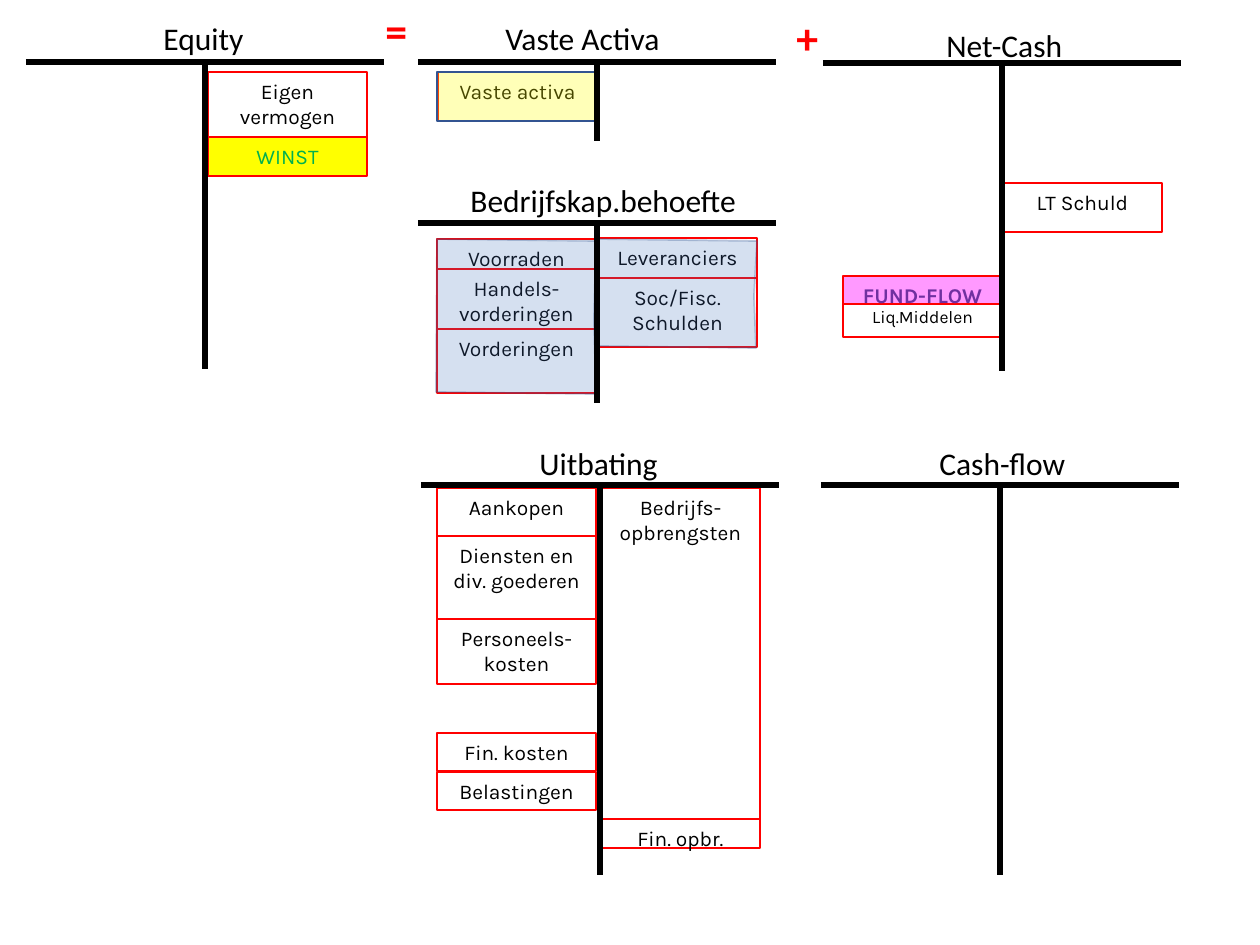
from lxml import etree
from pptx import Presentation
from pptx.dml.color import RGBColor
from pptx.enum.shapes import MSO_CONNECTOR, MSO_SHAPE
from pptx.enum.text import MSO_ANCHOR, MSO_AUTO_SIZE, PP_ALIGN
from pptx.oxml.ns import qn
from pptx.util import Pt

PX = 914400 / 126
RECTANGLE = MSO_SHAPE.RECTANGLE
STRAIGHT = MSO_CONNECTOR.STRAIGHT
CENTER = PP_ALIGN.CENTER
TOP = MSO_ANCHOR.TOP
GROW = MSO_AUTO_SIZE.SHAPE_TO_FIT_TEXT
BOX_WIDTH = 159
HALF_BAR = 179


def paint(color_format, color, opacity=100):
    """Set a hex colour on a fill, line or font colour, opacity in percent."""
    color_format.rgb = RGBColor.from_string(color)
    if opacity < 100:
        for element in color_format._xFill.iter(qn("a:srgbClr")):
            etree.SubElement(element, qn("a:alpha"), val=str(opacity * 1000))


def write(shape, text, color="000000", alignment=None, **font_values):
    for index, line in enumerate(text.split("\n")):
        frame = shape.text_frame
        paragraph = frame.add_paragraph() if index else frame.paragraphs[0]
        paragraph.alignment = alignment
        run = paragraph.add_run()
        run.text = line
        for name, value in font_values.items():
            setattr(run.font, name, value)
        paint(run.font.color, color)


presentation = Presentation()
presentation.slide_width = round(1260 * PX)
presentation.slide_height = round(945 * PX)
slide = presentation.slides.add_slide(presentation.slide_layouts[6])
shapes = slide.shapes

# Balance items: left, [(text, top, height, format values)]
columns = [
    (208, [("Eigen vermogen", 72, 65, {}),
           ("WINST", 137, 39, {"fill": "FFFF00", "color": "00B050"})]),
    (438, [("Vaste activa", 72, 49, {})]),
    (1003, [("LT Schuld", 183, 49, {})]),
    (843, [("Liq.Middelen", 300, 37, {"size": Pt(10)}),
           ("FUND-FLOW", 276, 28,
            {"fill": "FF99FF", "color": "7030A0", "bold": True})]),
    (437, [("Voorraden", 239, 30, {}),
           ("Handels-vorderingen", 269, 60, {}),
           ("Vorderingen", 329, 64, {})]),
    (598, [("Leveranciers", 238, 40, {}),
           ("Soc/Fisc.\nSchulden", 278, 69, {})]),
    (437, [("Aankopen", 488, 48, {}),
           ("Diensten en div. goederen", 536, 83, {}),
           ("Personeels-kosten", 619, 65, {}),
           ("Fin. kosten", 733, 38, {}),
           ("Belastingen", 772, 38, {})]),
    (601, [("Bedrijfs-opbrengsten", 488, 331, {}),
           ("Fin. opbr.", 819, 29, {})]),
]
for left, items in columns:
    for text, top, height, values in items:
        values = {"name": "Karla", "size": Pt(12), "fill": "FFFFFF", **values}
        box = shapes.add_shape(RECTANGLE, round(left * PX), round(top * PX),
                               round(BOX_WIDTH * PX), round(height * PX))
        box.shadow.inherit = False
        box.fill.solid()
        paint(box.fill.fore_color, values.pop("fill"))
        paint(box.line.color, "FF0000")
        box.line.width = Pt(0.75)
        box.text_frame.word_wrap = True
        box.text_frame.vertical_anchor = TOP
        write(box, text, alignment=CENTER, **values)

# Translucent highlights: corner points, fill, fill opacity, line, line opacity
highlights = [
    ([(437, 72), (596, 72), (596, 121), (437, 121)],
     "FFFF00", 28, "325491", 100),
    ([(437, 239), (596, 241), (594, 320), (596, 394), (436, 392)],
     "4472BE", 22, "2F528F", 31),
    ([(597, 239), (757, 241), (754, 296), (756, 348), (596, 346)],
     "4472BE", 22, "2F528F", 31),
]
for points, fill, fill_opacity, line, line_opacity in highlights:
    builder = shapes.build_freeform(*points[0], scale=PX)
    builder.add_line_segments(points[1:], close=True)
    highlight = builder.convert_to_shape()
    highlight.shadow.inherit = False
    highlight.fill.solid()
    paint(highlight.fill.fore_color, fill, fill_opacity)
    paint(highlight.line.color, line, line_opacity)
    highlight.line.width = Pt(1)

# T-accounts: stem x, bar y, stem bottom
accounts = [(205, 62, 369), (597, 62, 141), (1002, 63, 371),
            (597, 223, 403), (600, 485, 875), (1000, 485, 875)]
for stem, bar, bottom in accounts:
    for ends in [(stem - HALF_BAR, bar, stem + HALF_BAR, bar),
                 (stem, bar, stem, bottom)]:
        connector = shapes.add_connector(
            STRAIGHT, *[round(value * PX) for value in ends])
        paint(connector.line.color, "000000")
        connector.line.width = Pt(3)
        etree.SubElement(connector._element.spPr, qn("a:effectLst"))

# Titles and signs: text, left, top, width, height, format values
title_format = {"size": Pt(18)}
sign_format = {"size": Pt(25), "bold": True, "color": "FF0000"}
labels = [
    ("Equity", 151, 13, 106, 50, title_format),
    ("Vaste Activa", 493, 13, 181, 50, title_format),
    ("Net-Cash", 934, 20, 144, 50, title_format),
    ("Bedrijfskap.behoefte", 458, 175, 295, 50, title_format),
    ("Uitbating", 527, 438, 145, 50, title_format),
    ("Cash-flow", 927, 438, 152, 50, title_format),
    ("=", 373, -2, 48, 66, sign_format),
    ("+", 784, 5, 48, 66, sign_format),
]
for text, left, top, width, height, values in labels:
    label = shapes.add_textbox(round(left * PX), round(top * PX),
                               round(width * PX), round(height * PX))
    label.text_frame.word_wrap = False
    label.text_frame.auto_size = GROW
    write(label, text, name="Calibri", **values)

presentation.save("out.pptx")
